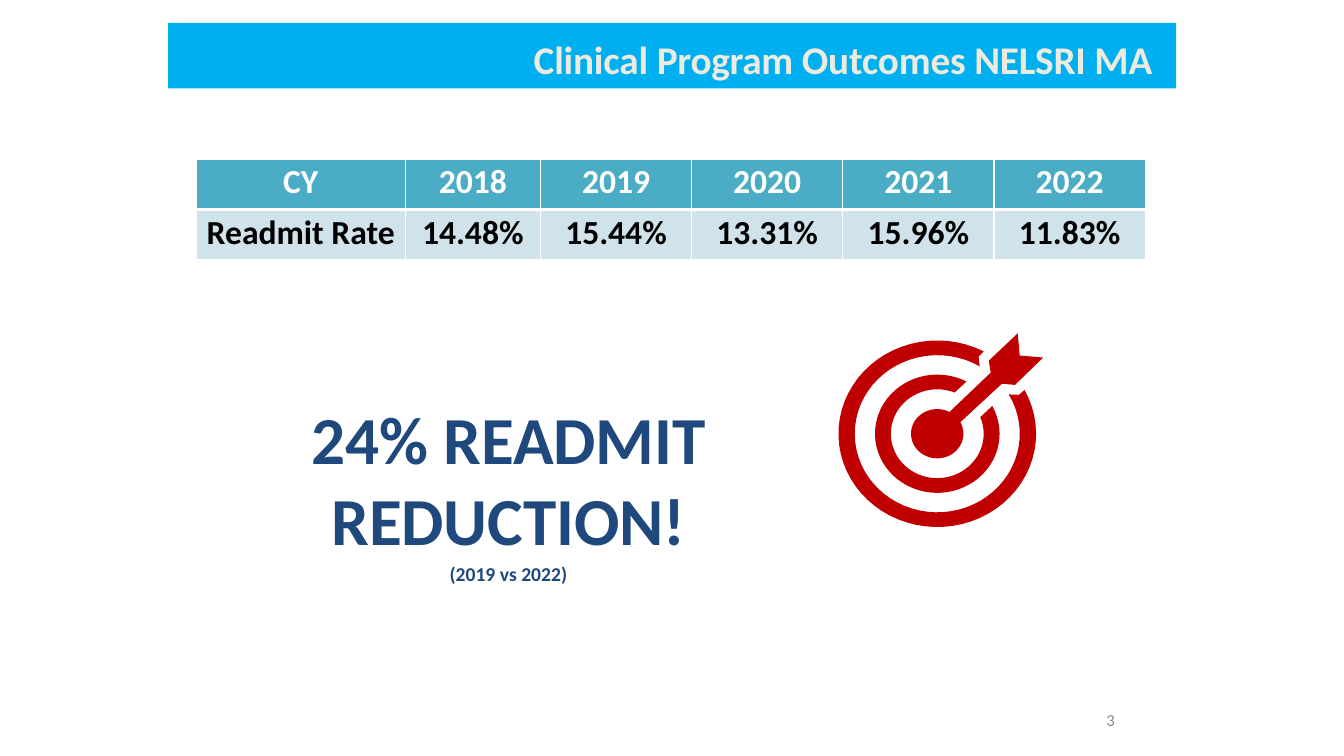
from math import cos, radians, sin

from lxml import etree
from pptx import Presentation
from pptx.dml.color import RGBColor
from pptx.enum.shapes import MSO_SHAPE
from pptx.enum.text import MSO_ANCHOR, PP_ALIGN
from pptx.oxml.ns import qn
from pptx.util import Cm, Pt

RECTANGLE = MSO_SHAPE.RECTANGLE
TOP = MSO_ANCHOR.TOP
LEFT, CENTER = PP_ALIGN.LEFT, PP_ALIGN.CENTER
WHITE, NAVY, RED = "FFFFFF", "1F487C", "C00000"


def paint(target, color):
    """Fill a shape or cell with one solid colour."""
    target.fill.solid()
    target.fill.fore_color.rgb = RGBColor.from_string(color)


def write(para, text, size, color, bold=True, spacing=0):
    """Add one formatted run; spacing is in hundredths of a point."""
    span = para.add_run()
    span.text = text
    span.font.name = "Calibri"
    span.font.size = Pt(size)
    span.font.bold = bold
    span.font.color.rgb = RGBColor.from_string(color)
    if spacing:
        span.font._element.set("spc", str(spacing))


deck = Presentation()
deck.slide_width, deck.slide_height = Cm(33.87), Cm(19.05)
page = deck.slides.add_slide(deck.slide_layouts[5])

# Title on its blue band
title = page.shapes.title
title.left, title.top, title.width, title.height = Cm(13.45), Cm(0.86), Cm(16.1), Cm(1.24)
band = page.shapes.add_shape(RECTANGLE, Cm(4.24), Cm(0.58), Cm(25.4), Cm(1.65))
band.shadow.inherit = False
paint(band, "00AFEF")
band.line.fill.background()
title.element.addprevious(band.element)

# Text boxes
claim = page.shapes.add_textbox(Cm(7.8), Cm(9.98), Cm(10.03), Cm(4.8))
number = page.shapes.add_textbox(Cm(27.88), Cm(17.86), Cm(0.5), Cm(0.56))
for box, align, before in ((title, LEFT, 0.9), (claim, CENTER, 1), (number, LEFT, 1)):
    frame = box.text_frame
    frame.word_wrap = True
    frame.vertical_anchor = TOP
    frame.margin_left = frame.margin_right = frame.margin_bottom = 0
    frame.margin_top = Cm(0.03)
    frame.paragraphs[0].alignment = align
    frame.paragraphs[0].space_before = Pt(before)

para = title.text_frame.paragraphs[0]
for text, spacing in (("Clinical ", -10), ("Program ", -20), ("Outcomes NELSRI MA", -10)):
    write(para, text, 28, "EDEBE0", spacing=spacing)

para = claim.text_frame.paragraphs[0]
write(para, "24% ", 48, NAVY)
write(para, "READMIT REDUCTION!", 48, NAVY, spacing=-10)
para = claim.text_frame.add_paragraph()
para.alignment = CENTER
para.space_before = Pt(2.2)
write(para, "(2019 vs 2022)", 14, NAVY)

write(number.text_frame.paragraphs[0], "3", 12, "888888", bold=False)

# Readmission table: text, fill, text colour, top and bottom border of each row
rows = [
    (["CY", "2018", "2019", "2020", "2021", "2022"], "4AACC5", WHITE, 1, 3),
    (["Readmit Rate", "14.48%", "15.44%", "13.31%", "15.96%", "11.83%"],
     "D0E2EA", "000000", 3, 1),
]
widths = [5.26, 3.41] + [3.81] * 4
table = page.shapes.add_table(
    len(rows), len(widths), Cm(4.95), Cm(4.01), Cm(sum(widths)), Cm(2.54)).table
for column, width in zip(table.columns, widths):
    column.width = Cm(width)
for row_index, (texts, fill, color, top, bottom) in enumerate(rows):
    table.rows[row_index].height = Cm(1.27)
    for column_index, text in enumerate(texts):
        cell = table.cell(row_index, column_index)
        cell.margin_left = cell.margin_right = cell.margin_bottom = 0
        cell.margin_top = Cm(0.07)
        properties = cell._tc.get_or_add_tcPr()
        for side, points in (("L", 1), ("R", 1), ("T", top), ("B", bottom)):
            border = etree.SubElement(properties, qn("a:ln" + side), w=str(Pt(points)))
            solid = etree.SubElement(border, qn("a:solidFill"))
            etree.SubElement(solid, qn("a:srgbClr"), val=WHITE)
        paint(cell, fill)
        para = cell.text_frame.paragraphs[0]
        para.alignment = CENTER
        para.space_before = Pt(2)
        write(para, text, 24, color)

# Target: each outline joins elliptical arcs (radii, start and end degrees)
# and loose points, in cm from the centre
center_x, center_y = 23.62, 10.93
outer_ring = [
    (2.49, 2.35, -62, -388), (2.06, -0.98),
    (2.08, 1.98, -390, -59), (1.04, -1.94),
]
middle_ring = [(1.57, 1.49, -62, -388), (1.17, 1.12, -382, -68)]
bullseye_arrow = [
    (0.66, 0.62, -62, -388),
    (1.63, -1.26), (1.96, -1.23), (2.67, -1.92), (2.08, -1.97),
    (2.03, -2.53), (1.3, -1.84), (1.35, -1.54),
]
arc_steps = 60
for outline in (outer_ring, middle_ring, bullseye_arrow):
    points = []
    for part in outline:
        if len(part) == 2:
            points.append(part)
            continue
        radius_x, radius_y, start, end = part
        for step in range(arc_steps + 1):
            angle = radians(start + (end - start) * step / arc_steps)
            points.append((radius_x * cos(angle), radius_y * sin(angle)))
    points = [(Cm(center_x + x), Cm(center_y + y)) for x, y in points]
    builder = page.shapes.build_freeform(*points[0])
    builder.add_line_segments(points[1:], close=True)
    shape = builder.convert_to_shape()
    shape.shadow.inherit = False
    paint(shape, RED)
    shape.line.fill.background()

deck.save("out.pptx")
